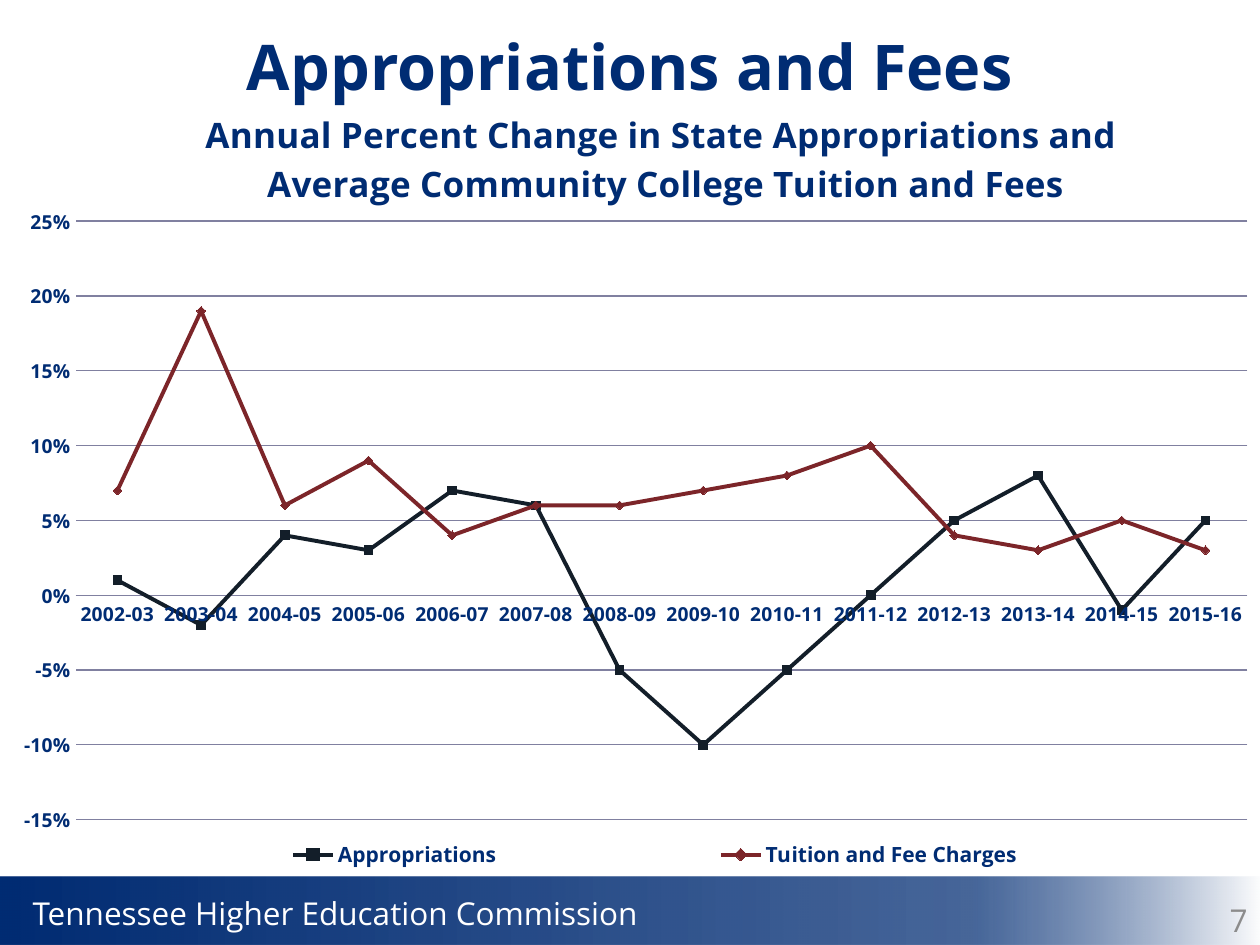
"""Build the appropriations and fees slide with its line chart."""
from lxml import etree
from pptx import Presentation
from pptx.chart.data import CategoryChartData
from pptx.dml.color import RGBColor
from pptx.enum.chart import XL_CHART_TYPE, XL_LEGEND_POSITION, XL_MARKER_STYLE, XL_TICK_MARK
from pptx.enum.shapes import MSO_SHAPE
from pptx.enum.text import MSO_ANCHOR, PP_ALIGN
from pptx.oxml import parse_xml
from pptx.oxml.ns import nsdecls, qn
from pptx.util import Inches, Pt

FONT = "Open Sans"
NAVY = RGBColor(0x00, 0x2C, 0x73)
INK = RGBColor(0x13, 0x1E, 0x29)
MAROON = RGBColor(0x7C, 0x25, 0x29)
WHITE = RGBColor(0xFF, 0xFF, 0xFF)
GRAY = RGBColor(0x8C, 0x8C, 0x8C)
GRID = RGBColor(0x80, 0x80, 0xA0)

YEARS = [f"{y}-{(y + 1) % 100:02d}" for y in range(2002, 2016)]
SERIES = [
    ("Appropriations", INK, XL_MARKER_STYLE.SQUARE,
     [0.01, -0.02, 0.04, 0.03, 0.07, 0.06, -0.05,
      -0.1, -0.05, 0, 0.05, 0.08, -0.01, 0.05]),
    ("Tuition and Fee Charges", MAROON, XL_MARKER_STYLE.DIAMOND,
     [0.07, 0.19, 0.06, 0.09, 0.04, 0.06, 0.06,
      0.07, 0.08, 0.1, 0.04, 0.03, 0.05, 0.03]),
]


def set_font(font, size, color, bold=False):
    font.name, font.size, font.bold = FONT, Pt(size), bold
    font.color.rgb = color


def write(shape, text, size, color, align, bold=False):
    tf = shape.text_frame
    tf.text = text
    p = tf.paragraphs[0]
    p.alignment = align
    set_font(p.runs[0].font, size, color, bold)
    return tf


def add_title(s):
    title = s.shapes.title
    title.left, title.top = Inches(0), Inches(0.17)
    title.width, title.height = Inches(10), Inches(0.83)
    tf = write(title, "Appropriations and Fees", 36, NAVY, PP_ALIGN.CENTER, True)
    tf.vertical_anchor = MSO_ANCHOR.TOP


def add_label(s, box, text, color, align, wrap=True):
    tb = s.shapes.add_textbox(*map(Inches, box))
    write(tb, text, 18, color, align).word_wrap = wrap


def add_footer_band(s):
    band = s.shapes.add_shape(MSO_SHAPE.RECTANGLE, Inches(0), Inches(6.96),
                              Inches(10.02), Inches(0.54))
    band.shadow.inherit = False
    band.line.fill.background()
    band.fill.gradient()
    band.fill.gradient_angle = 0
    stops = band.fill._fill._gradFill.find(qn("a:gsLst"))
    for old in list(stops):
        stops.remove(old)
    for pos, color, alpha in ((0, NAVY, 100), (77, NAVY, 72), (100, WHITE, 100)):
        gs = etree.SubElement(stops, qn("a:gs"), pos=str(pos * 1000))
        clr = etree.SubElement(gs, qn("a:srgbClr"), val=str(color))
        etree.SubElement(clr, qn("a:alpha"), val=str(alpha * 1000))


def set_layout(parent, index, inner=False, **fractions):
    """Place a chart part by fractions of the chart area."""
    for old in parent.findall(qn("c:layout")):
        parent.remove(old)
    target = '<c:layoutTarget val="inner"/>' if inner else ""
    modes = "".join(f'<c:{k}Mode val="edge"/>' for k in "xy")
    sizes = "".join(f'<c:{k} val="{v}"/>' for k, v in fractions.items())
    parent.insert(index, parse_xml(
        f'<c:layout {nsdecls("c")}><c:manualLayout>{target}{modes}{sizes}'
        "</c:manualLayout></c:layout>"))


def style_axis(axis):
    axis.major_tick_mark = axis.minor_tick_mark = XL_TICK_MARK.NONE
    set_font(axis.tick_labels.font, 11, NAVY, True)


def style_axes(chart):
    cat, val = chart.category_axis, chart.value_axis
    style_axis(cat)
    style_axis(val)
    val.minimum_scale, val.maximum_scale, val.major_unit = -0.15, 0.25, 0.05
    val.tick_labels.number_format = "0%"
    val.tick_labels.number_format_is_linked = False
    val.format.line.fill.background()
    val.has_major_gridlines = True
    for line in (cat.format.line, val.major_gridlines.format.line):
        line.color.rgb = GRID
        line.width = Pt(0.75)


def style_series(ser, color, marker):
    ser.smooth = False
    ser.format.line.color.rgb = color
    ser.format.line.width = Pt(2.25)
    ser.marker.style, ser.marker.size = marker, 5
    ser.marker.format.fill.solid()
    ser.marker.format.fill.fore_color.rgb = color
    ser.marker.format.line.color.rgb = color


def style_chart_title(chart):
    tf = chart.chart_title.text_frame
    tf.text = ("Annual Percent Change in State Appropriations and \n"
               "Average Community College Tuition and Fees")
    for p in tf.paragraphs:
        p.alignment = PP_ALIGN.CENTER
        set_font(p.runs[0].font, 20, NAVY, True)
    set_layout(chart.chart_title._element, 1, x=0.16, y=0)


def style_legend(chart):
    chart.has_legend = True
    legend = chart.legend
    legend.position = XL_LEGEND_POSITION.BOTTOM
    legend.include_in_layout = False
    set_font(legend.font, 12, NAVY, True)
    set_layout(legend._element, 1, x=0.06, y=0.94, w=0.92, h=0.05)


def add_line_chart(s):
    data = CategoryChartData(number_format="0%")
    data.categories = YEARS
    for name, _, _, values in SERIES:
        data.add_series(name, values)
    chart = s.shapes.add_chart(XL_CHART_TYPE.LINE_MARKERS, Inches(0), Inches(0.83),
                               Inches(10), Inches(6.17), data).chart
    set_font(chart.font, 10, NAVY)
    chart.plots[0].vary_by_categories = False
    style_chart_title(chart)
    style_axes(chart)
    style_legend(chart)
    for ser, (_, color, marker, _) in zip(chart.plots[0].series, SERIES):
        style_series(ser, color, marker)
    plot_area = chart._chartSpace.find(".//" + qn("c:plotArea"))
    set_layout(plot_area, 0, inner=True, x=0.06, y=0.15, w=0.93, h=0.77)


def main():
    prs = Presentation()
    prs.slide_width, prs.slide_height = Inches(10), Inches(7.5)
    s = prs.slides.add_slide(prs.slide_layouts[5])
    add_footer_band(s)
    add_label(s, (0.16, 7.05, 5.05, 0.4), "Tennessee Higher Education Commission",
              WHITE, PP_ALIGN.LEFT, wrap=False)
    add_label(s, (7.67, 7.1, 2.33, 0.4), "7", GRAY, PP_ALIGN.RIGHT)
    add_title(s)
    add_line_chart(s)
    prs.save("out.pptx")


if __name__ == "__main__":
    main()
